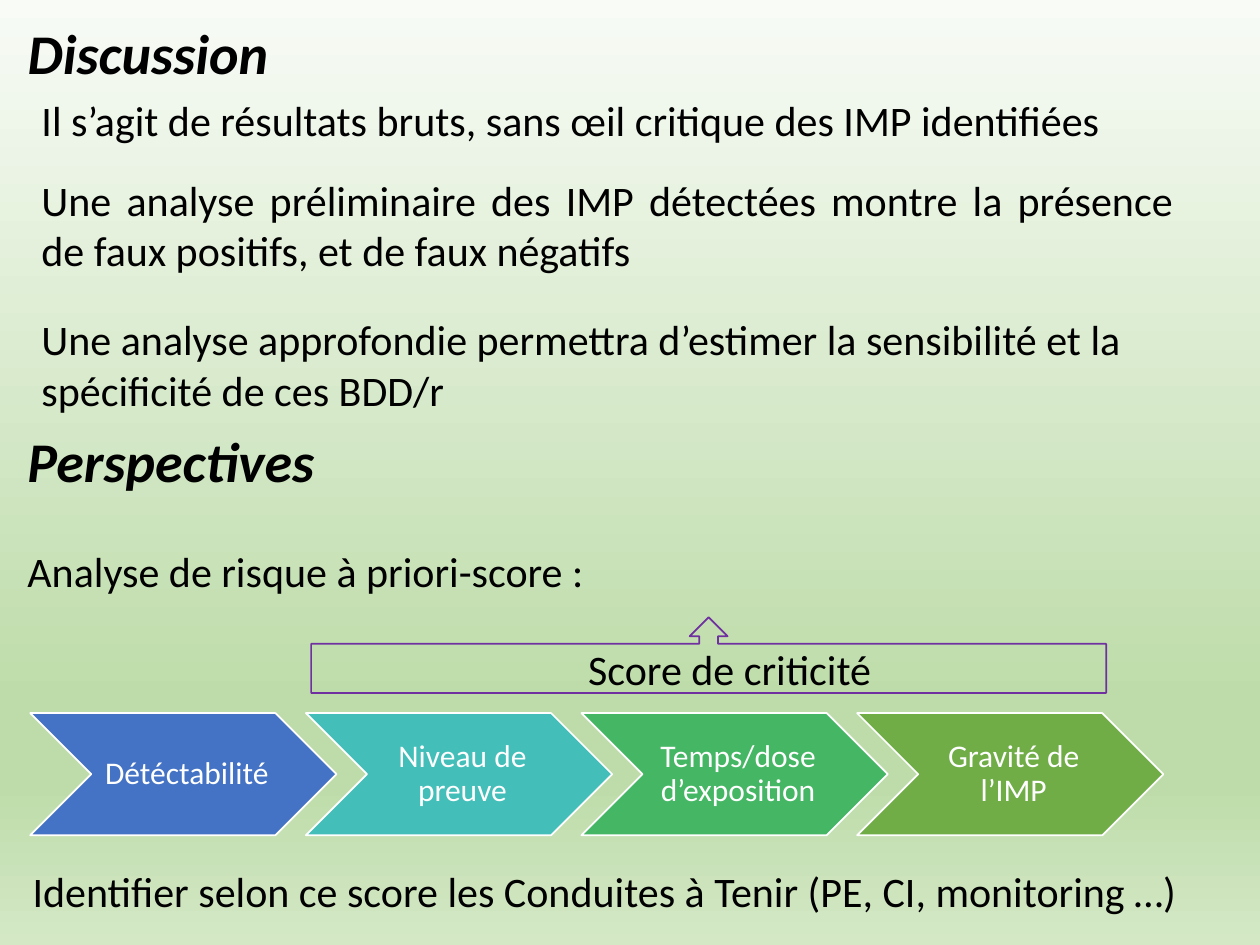
import copy

import pptx
import pptx.dml.color
import pptx.enum.shapes
import pptx.enum.text
import pptx.util

Pt = pptx.util.Pt
ALIGN = pptx.enum.text.PP_ALIGN
ANCHOR = pptx.enum.text.MSO_ANCHOR
SHAPE = pptx.enum.shapes.MSO_SHAPE

COLOURS = {"black": "000000", "white": "FFFFFF", "purple": "7030A0"}
BACKGROUND = [(0, "F8FBF6"), (0.74, "BEDCAA"), (0.83, "BEDCAA"), (1, "D4E8C6")]

HEADING = {"size": Pt(32), "bold": True, "italic": True}
BODY = {"size": Pt(24)}
STEP = {"size": Pt(18)}

TITLE = "Discussion"
DISCUSSION = [
    ("Il s’agit de résultats bruts, sans œil critique des IMP identifiées", ALIGN.JUSTIFY, 17),
    ("Une analyse préliminaire des IMP détectées montre la présence de faux positifs, "
     "et de faux négatifs", ALIGN.JUSTIFY, 22),
    ("Une analyse approfondie permettra d’estimer la sensibilité et la spécificité "
     "de ces BDD/r", ALIGN.LEFT, 0),
]
LINES = [
    ("Perspectives", (8.6, 240, 680, 46), HEADING),
    ("Analyse de risque à priori-score :", (8.6, 308, 680, 36), BODY),
    ("Identifier selon ce score les Conduites à Tenir (PE, CI, monitoring …)",
     (11.5, 491, 686, 36), BODY),
]
SCORE = "Score de criticité"
STEPS = [
    ("Détéctabilité", "4472C4"),
    ("Niveau de preuve", "43BEB9"),
    ("Temps/dose d’exposition", "45B664"),
    ("Gravité de l’IMP", "70AD47"),
]
STEP_LEFT, STEP_TOP, STEP_WIDTH, STEP_HEIGHT = 17.3, 407.5, 175, 69.8
STEP_PITCH = STEP_WIDTH * 0.9


def colour(value):
    return pptx.dml.color.RGBColor.from_string(value)


def apply(target, values):
    for name, value in values.items():
        setattr(target, name, value)


def place(shape, box):
    apply(shape, dict(zip(("left", "top", "width", "height"), map(Pt, box))))


def write(shape, paragraphs, font, text_colour="black", **frame_values):
    frame = shape.text_frame
    apply(frame, {"word_wrap": True, **frame_values})
    for index, (text, values) in enumerate(paragraphs):
        paragraph = frame.add_paragraph() if index else frame.paragraphs[0]
        apply(paragraph, values)
        run = paragraph.add_run()
        run.text = text
        apply(run.font, {"name": "Calibri", **font})
        run.font.color.rgb = colour(COLOURS[text_colour])


def add_text(slide, box, paragraphs, font):
    shape = slide.shapes.add_textbox(*map(Pt, box))
    write(shape, paragraphs, font)


def add_outlined(slide, kind, box, line):
    shape = slide.shapes.add_shape(kind, *map(Pt, box))
    shape.shadow.inherit = False
    shape.line.color.rgb = colour(COLOURS[line])
    shape.line.width = Pt(1)
    return shape


def paint_background(slide):
    fill = slide.background.fill
    fill.gradient()
    fill.gradient_angle = 270
    stop_list = slide._element.xpath(".//a:gsLst")[0]
    while len(stop_list) < len(BACKGROUND):
        stop_list.append(copy.deepcopy(stop_list[0]))
    for stop, (position, value) in zip(fill.gradient_stops, BACKGROUND):
        stop.position = position
        stop.color.rgb = colour(value)


def main():
    presentation = pptx.Presentation()
    apply(presentation, {"slide_width": Pt(720), "slide_height": Pt(540)})
    slide = presentation.slides.add_slide(presentation.slide_layouts[5])
    paint_background(slide)

    title = slide.shapes.title
    place(title, (8.6, 0, 711.4, 64.8))
    write(title, [(TITLE, {"alignment": ALIGN.LEFT, "line_spacing": 0.9})], HEADING,
          vertical_anchor=ANCHOR.MIDDLE)

    discussion = [(text, {"alignment": alignment, "space_after": Pt(gap)})
                  for text, alignment, gap in DISCUSSION]
    add_text(slide, (16.6, 50.4, 661, 191.5), discussion, BODY)
    for text, box, font in LINES:
        add_text(slide, box, [(text, {})], font)

    callout = add_outlined(slide, SHAPE.UP_ARROW_CALLOUT, (177.8, 352.8, 454.3, 43.2), "purple")
    callout.fill.background()
    write(callout, [(SCORE, {"alignment": ALIGN.CENTER})], BODY,
          vertical_anchor=ANCHOR.MIDDLE, margin_left=Pt(24), margin_right=0,
          margin_top=0, margin_bottom=0)

    for index, (text, fill) in enumerate(STEPS):
        box = (STEP_LEFT + index * STEP_PITCH, STEP_TOP, STEP_WIDTH, STEP_HEIGHT)
        chevron = add_outlined(slide, SHAPE.CHEVRON, box, "white")
        chevron.fill.solid()
        chevron.fill.fore_color.rgb = colour(fill)
        write(chevron, [(text, {"alignment": ALIGN.CENTER, "line_spacing": 0.9})], STEP, "white",
              vertical_anchor=ANCHOR.MIDDLE, margin_left=Pt(6), margin_right=Pt(2),
              margin_top=Pt(2), margin_bottom=Pt(2))

    presentation.save("out.pptx")


if __name__ == "__main__":
    main()
